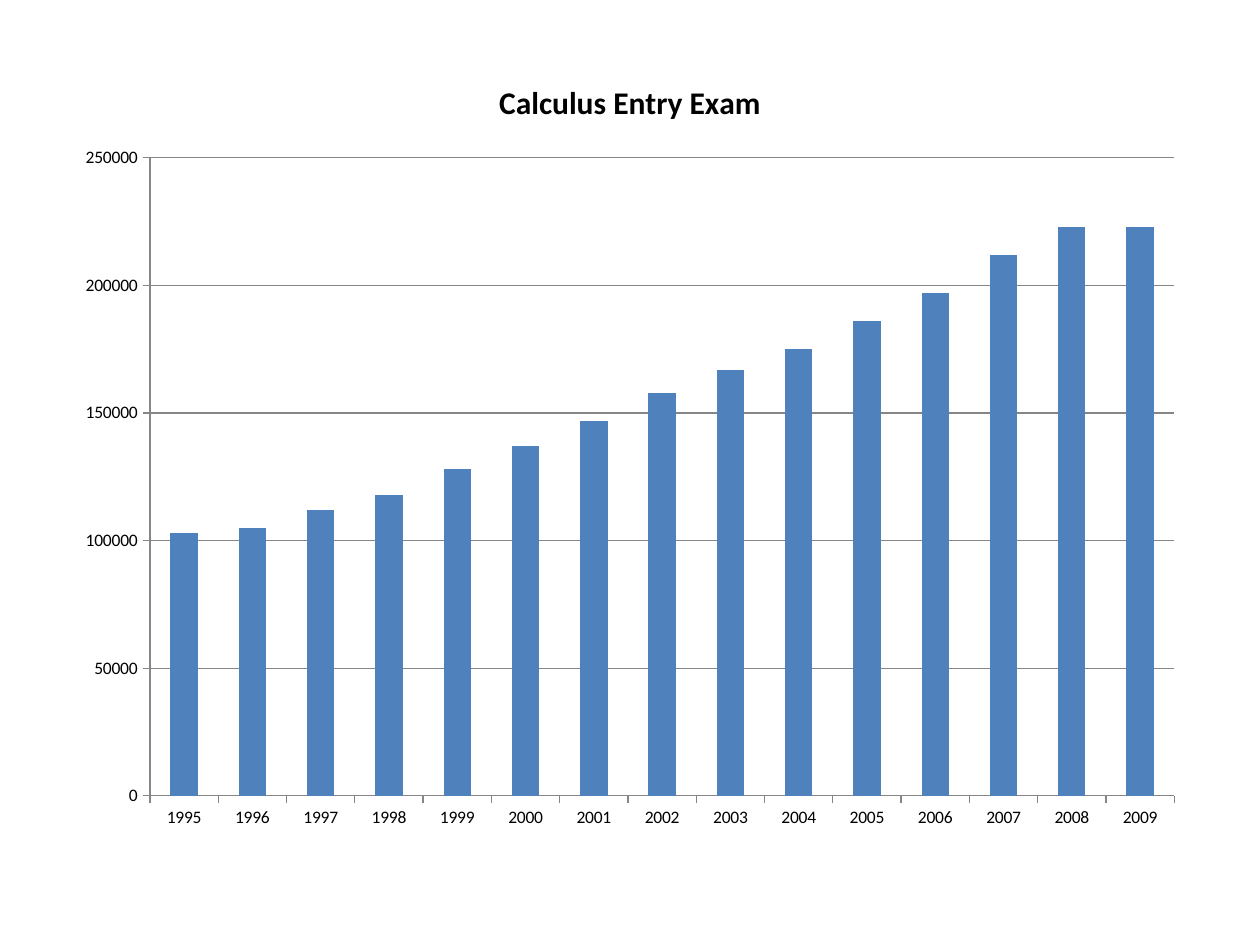
import pptx
import pptx.chart.data
import pptx.dml.color
import pptx.enum.chart
import pptx.util
from dataclasses import dataclass

Cm = pptx.util.Cm
Pt = pptx.util.Pt


@dataclass
class Theme:
    font: str = "Calibri"
    text: str = "000000"
    bar: str = "4F81BD"
    line: str = "868686"
    label: int = 10
    title: int = 18


class Deck:
    """Holds the theme and the current slide."""

    def __init__(self, theme):
        self.theme = theme
        self.prs = pptx.Presentation()
        self.prs.slide_width, self.prs.slide_height = Cm(25.4), Cm(19.05)
        self.slide = self.prs.slides.add_slide(self.prs.slide_layouts[6])

    def color(self, code):
        return pptx.dml.color.RGBColor.from_string(code)

    def style(self, font, size, bold=False):
        font.name = self.theme.font
        font.size = Pt(size)
        font.bold = bold
        font.color.rgb = self.color(self.theme.text)

    def stroke(self, line):
        line.width = Pt(0.75)
        line.color.rgb = self.color(self.theme.line)

    def columns(self, title, cats, vals, left, top, width, height):
        data = pptx.chart.data.CategoryChartData()
        data.categories = cats
        data.add_series(title, vals)
        kind = pptx.enum.chart.XL_CHART_TYPE.COLUMN_CLUSTERED
        chart = self.slide.shapes.add_chart(
            kind, Cm(left), Cm(top), Cm(width), Cm(height), data).chart
        self.style(chart.font, self.theme.label)
        chart.has_legend = False

        # Chart title
        chart.has_title = True
        frame = chart.chart_title.text_frame
        frame.text = title
        self.style(frame.paragraphs[0].runs[0].font, self.theme.title, True)
        chart.chart_title.include_in_layout = False

        # Bars
        plot = chart.plots[0]
        plot.vary_by_categories = False
        plot.gap_width = 150
        fill = plot.series[0].format.fill
        fill.solid()
        fill.fore_color.rgb = self.color(self.theme.bar)

        # Axes and grid
        for axis in (chart.category_axis, chart.value_axis):
            axis.major_tick_mark = pptx.enum.chart.XL_TICK_MARK.OUTSIDE
            self.stroke(axis.format.line)
        axis = chart.value_axis
        axis.minimum_scale, axis.maximum_scale = 0, 250000
        axis.major_unit = 50000
        axis.has_major_gridlines = True
        self.stroke(axis.major_gridlines.format.line)


def main():
    deck = Deck(Theme())

    # Exam counts by year, in thousands
    counts = [103, 105, 112, 118, 128, 137, 147, 158,
              167, 175, 186, 197, 212, 223, 223]
    years = [str(1995 + step) for step in range(len(counts))]
    deck.columns("Calculus Entry Exam", years, [n * 1000 for n in counts],
                 1.27, 1.06, 22.86, 15.95)

    deck.prs.save("out.pptx")


if __name__ == "__main__":
    main()
